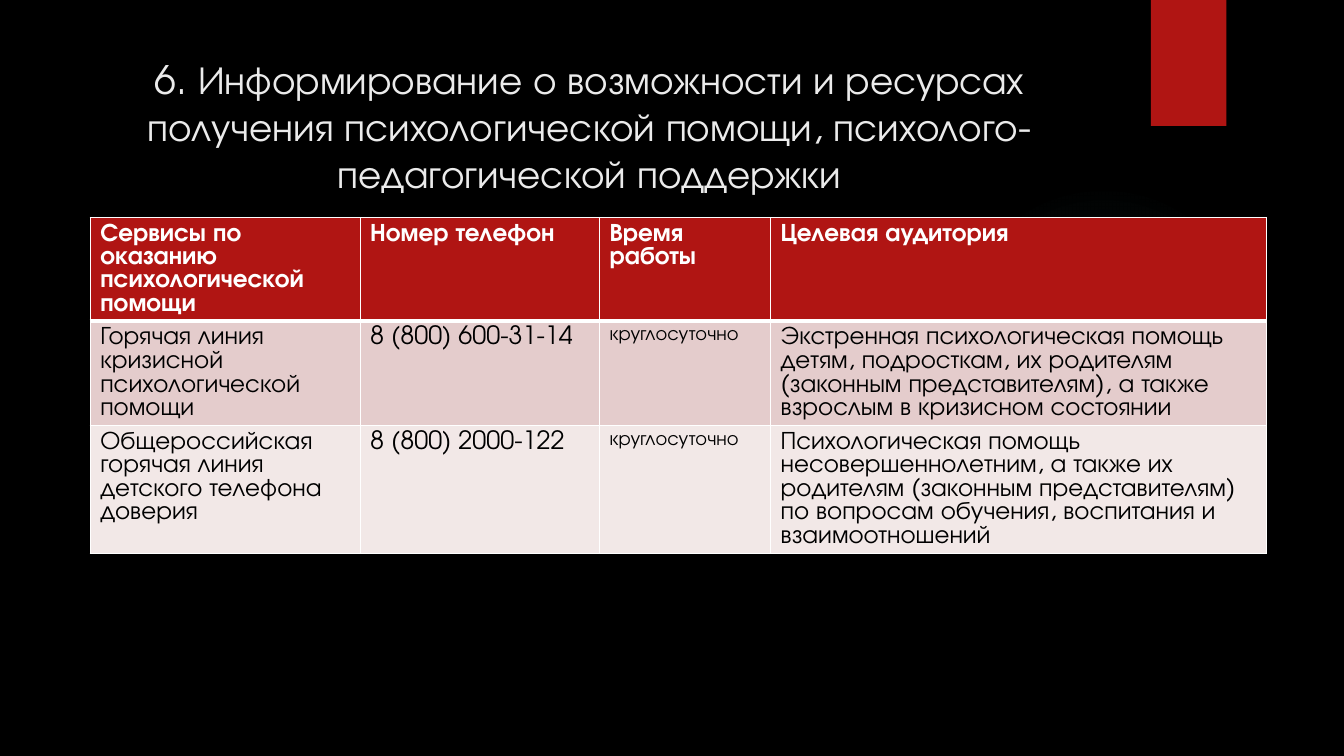
from dataclasses import dataclass

from lxml import etree
from pptx import Presentation
from pptx.dml.color import RGBColor
from pptx.enum.shapes import MSO_SHAPE
from pptx.enum.text import MSO_ANCHOR, MSO_AUTO_SIZE, PP_ALIGN
from pptx.oxml import parse_xml
from pptx.oxml.ns import nsdecls, qn
from pptx.util import Emu, Pt

PX = 9525
FONT = "TeX Gyre Adventor"
RECTANGLE, OVAL = MSO_SHAPE.RECTANGLE, MSO_SHAPE.OVAL
CENTER, MIDDLE, NO_AUTOFIT = PP_ALIGN.CENTER, MSO_ANCHOR.MIDDLE, MSO_AUTO_SIZE.NONE
TITLE_ONLY = 5

COLORS = {
    "background": "000000",
    "title": "EBEBEB",
    "accent": "B01513",
    "glow": "50B9C1",
    "white": "FFFFFF",
    "black": "000000",
    "odd": "E4CCCC",
    "even": "F2E8E7",
}


@dataclass(frozen=True)
class Box:
    left: int
    top: int
    width: int
    height: int

    def emu(self) -> tuple[Emu, ...]:
        return tuple(Emu(v * PX) for v in (self.left, self.top, self.width, self.height))


@dataclass(frozen=True)
class Row:
    height: int
    fill: str
    color: str
    bold: bool
    sizes: tuple[int, ...]
    top_line: int
    bottom_line: int
    texts: tuple[str, ...]


TITLE = ("6. Информирование о возможности и ресурсах получения психологической "
         "помощи, психолого-педагогической поддержки")
TITLE_BOX = Box(68, 46, 987, 147)
GLOW_BOX = Box(903, 176, 296, 296)
RIBBON_BOX = Box(1096, 0, 72, 120)
GLOW_STOPS = ((0, 7), (36, 6), (69, 0))
COLUMNS = (257, 228, 163, 472)
BODY_SIZES = (18, 18, 14, 18)
ROWS = (
    Row(99, "accent", "white", True, (18,) * 4, 1, 3, (
        "Сервисы по оказанию психологической помощи",
        "Номер телефон",
        "Время работы",
        "Целевая аудитория",
    )),
    Row(99, "odd", "black", False, BODY_SIZES, 3, 1, (
        "Горячая линия кризисной психологической помощи",
        "8 (800) 600-31-14",
        "круглосуточно",
        "Экстренная психологическая помощь детям, подросткам, их родителям "
        "(законным представителям), а также взрослым в кризисном состоянии",
    )),
    Row(122, "even", "black", False, BODY_SIZES, 1, 1, (
        "Общероссийская горячая линия детского телефона доверия",
        "8 (800) 2000-122",
        "круглосуточно",
        "Психологическая помощь несовершеннолетним, а также их родителям "
        "(законным представителям) по вопросам обучения, воспитания и взаимоотношений",
    )),
)
TABLE_BOX = Box(86, 207, sum(COLUMNS), sum(row.height for row in ROWS))


def rgb(name: str) -> RGBColor:
    return RGBColor.from_string(COLORS[name])


def set_font(p, size: int, color: str, bold: bool = False) -> None:
    p.font.name = FONT
    p.font.size = Pt(size)
    p.font.bold = bold
    p.font.color.rgb = rgb(color)


def add_plain_shape(s, kind, box: Box, color: str):
    sp = s.shapes.add_shape(kind, *box.emu())
    sp.shadow.inherit = False
    sp.fill.solid()
    sp.fill.fore_color.rgb = rgb(color)
    sp.line.fill.background()
    return sp


def add_glow(s) -> None:
    sp = add_plain_shape(s, OVAL, GLOW_BOX, "glow")
    stops = "".join(
        f'<a:gs pos="{pos * 1000}"><a:srgbClr val="{COLORS["glow"]}">'
        f'<a:alpha val="{alpha * 1000}"/></a:srgbClr></a:gs>'
        for pos, alpha in GLOW_STOPS
    )
    gradient = parse_xml(
        f'<a:gradFill {nsdecls("a")}><a:gsLst>{stops}</a:gsLst><a:path path="circle">'
        '<a:fillToRect l="50000" t="50000" r="50000" b="50000"/></a:path></a:gradFill>'
    )
    spPr = sp.element.spPr
    spPr.replace(spPr.find(qn("a:solidFill")), gradient)


def add_title(s) -> None:
    sp = s.shapes.title
    sp.left, sp.top, sp.width, sp.height = TITLE_BOX.emu()
    tf = sp.text_frame
    tf.text = TITLE
    tf.word_wrap = True
    tf.auto_size = NO_AUTOFIT
    tf.vertical_anchor = MIDDLE
    p = tf.paragraphs[0]
    p.alignment = CENTER
    set_font(p, 28, "title")


def set_borders(cell, row: Row) -> None:
    tcPr = cell._tc.get_or_add_tcPr()
    widths = {"lnL": 1, "lnR": 1, "lnT": row.top_line, "lnB": row.bottom_line}
    for tag, width in widths.items():
        ln = etree.SubElement(tcPr, qn(f"a:{tag}"), w=str(Pt(width)))
        fill = etree.SubElement(ln, qn("a:solidFill"))
        etree.SubElement(fill, qn("a:srgbClr"), val=COLORS["white"])


def add_services_table(s) -> None:
    table = s.shapes.add_table(len(ROWS), len(COLUMNS), *TABLE_BOX.emu()).table
    for column, width in zip(table.columns, COLUMNS):
        column.width = Emu(width * PX)
    for i, row in enumerate(ROWS):
        table.rows[i].height = Emu(row.height * PX)
        for cell, text, size in zip(table.rows[i].cells, row.texts, row.sizes):
            set_borders(cell, row)
            cell.fill.solid()
            cell.fill.fore_color.rgb = rgb(row.fill)
            cell.text = text
            set_font(cell.text_frame.paragraphs[0], size, row.color, row.bold)


def main() -> None:
    prs = Presentation()
    prs.slide_width, prs.slide_height = Emu(1280 * PX), Emu(720 * PX)
    s = prs.slides.add_slide(prs.slide_layouts[TITLE_ONLY])
    s.background.fill.solid()
    s.background.fill.fore_color.rgb = rgb("background")
    add_glow(s)
    add_plain_shape(s, RECTANGLE, RIBBON_BOX, "accent")
    add_title(s)
    add_services_table(s)
    prs.save("out.pptx")


if __name__ == "__main__":
    main()
